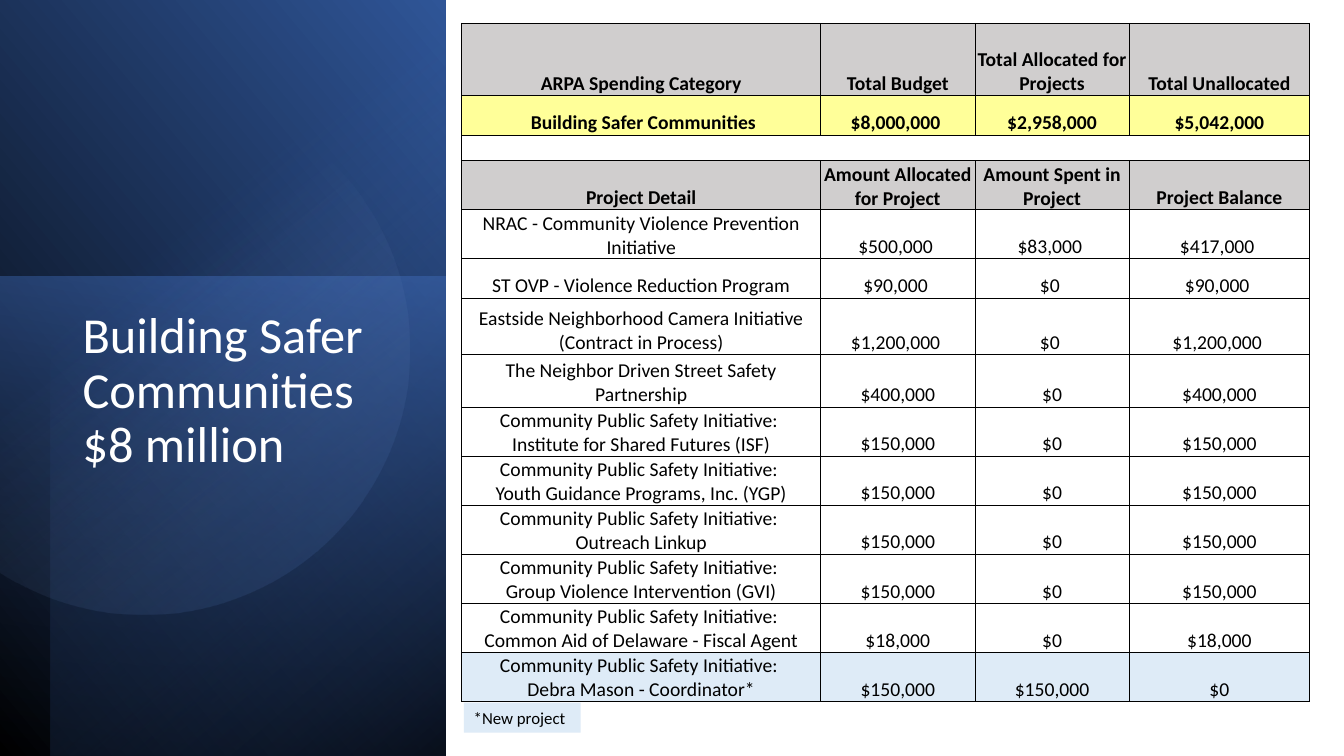
import math
from lxml import etree
from pptx import Presentation
from pptx import util as u
from pptx.dml.color import RGBColor
from pptx.enum import shapes, text
from pptx.oxml.ns import qn

Inches, Pt = u.Inches, u.Pt
INK = {"black": "000000", "white": "FFFFFF", "blue": "2F5597", "mid": "4472C4",
       "navy": "203864", "pale": "8FAADC", "grey": "D0CECE",
       "yellow": "FFFF99", "ice": "DEEBF7"}


def shade(shape, angle, stops):
    """Fill with a linear gradient of (position, colour, opacity) stops."""
    shape.shadow.inherit = False
    shape.line.fill.background()
    shape.fill.gradient()
    grad = shape._element.spPr.find(qn("a:gradFill"))
    grad.find(qn("a:lin")).set("ang", str(angle * 60000))
    ramp = grad.find(qn("a:gsLst"))
    for old in list(ramp):
        ramp.remove(old)
    for pos, ink, alpha in stops:
        stop = etree.SubElement(ramp, qn("a:gs"), pos=str(pos * 1000))
        tone = etree.SubElement(stop, qn("a:srgbClr"), val=INK[ink])
        etree.SubElement(tone, qn("a:alpha"), val=str(alpha * 1000))


def write(para, words, size, ink="black", bold=False):
    run = para.add_run()
    run.text = words
    run.font.name = "Calibri"
    run.font.size = Pt(size)
    run.font.bold = bold
    run.font.color.rgb = RGBColor.from_string(INK[ink])


deck = Presentation()
deck.slide_width, deck.slide_height = Inches(13.33), Inches(7.5)
slide = deck.slides.add_slide(deck.slide_layouts[6])

# Blue side panel: left, top, width, height, turn, mirrored, angle, stops
panels = [
    (-1.55, 1.55, 7.52, 4.42, 90, True, 310,
     [(0, "black", 100), (100, "blue", 100)]),
    (-0.17, 2.91, 4.76, 4.42, 270, False, 190,
     [(0, "mid", 50), (100, "navy", 0)]),
    (-1.29, 1.79, 7.5, 3.92, 270, True, 220,
     [(0, "black", 59), (69, "mid", 0)]),
]
for left, top, wide, high, turn, flip, angle, stops in panels:
    panel = slide.shapes.add_shape(
        shapes.MSO_SHAPE.RECTANGLE,
        Inches(left), Inches(top), Inches(wide), Inches(high))
    panel.rotation = turn
    if flip:
        panel._element.spPr.find(qn("a:xfrm")).set("flipH", "1")
    shade(panel, angle, stops)

# Circle cut off by the left edge of the slide
mid_x, mid_y, radius = 1.43, 3.47, 2.63
edge = math.acos(-mid_x / radius)
steps = 120
arc = []
for i in range(steps + 1):
    turn = edge * (2 * i / steps - 1)
    arc.append((Inches(mid_x + radius * math.cos(turn)),
                Inches(mid_y + radius * math.sin(turn))))
build = slide.shapes.build_freeform(*arc[0])
build.add_line_segments(arc[1:], close=True)
shade(build.convert_to_shape(), 52, [(39, "pale", 0), (100, "blue", 26)])

# Title
title = slide.shapes.add_textbox(
    Inches(0.72), Inches(3.03), Inches(3.15), Inches(3.36))
title.text_frame.word_wrap = True
para = title.text_frame.paragraphs[0]
para.line_spacing = 0.9
write(para, "Building Safer Communities $8 million", 36, "white")

# Budget table: height, fill, bold, cells
group = "Community Public Safety Initiative: \n"
rows = [
    (0.72, "grey", True, ["ARPA Spending Category", "Total Budget",
                          "Total Allocated for Projects", "Total Unallocated"]),
    (0.39, "yellow", True, [" Building Safer Communities", "$8,000,000 ",
                            "$2,958,000", "$5,042,000"]),
    (0.16, None, False, [""] * 4),
    (0.45, "grey", True, ["Project Detail", "Amount Allocated for Project",
                          "Amount Spent in Project", "Project Balance"]),
    (0.39, None, False, ["NRAC - Community Violence Prevention Initiative",
                         "$500,000 ", "$83,000 ", "$417,000 "]),
    (0.39, None, False, ["ST OVP - Violence Reduction Program",
                         "$90,000 ", "$0 ", "$90,000 "]),
    (0.56, None, False,
     ["Eastside Neighborhood Camera Initiative (Contract in Process)",
      "$1,200,000 ", "$0 ", "$1,200,000 "]),
    (0.52, None, False, ["The Neighbor Driven Street Safety Partnership",
                         "$400,000", "$0", "$400,000"]),
    (0.4, None, False, [group + "Institute for Shared Futures (ISF)",
                        "$150,000", "$0", "$150,000"]),
    (0.41, None, False, [group + "Youth Guidance Programs, Inc. (YGP)",
                         "$150,000", "$0", "$150,000"]),
    (0.38, None, False, [group + "Outreach Linkup",
                         "$150,000", "$0", "$150,000"]),
    (0.38, None, False, [group + "Group Violence Intervention (GVI)",
                         "$150,000", "$0", "$150,000"]),
    (0.38, None, False, [group + "Common Aid of Delaware - Fiscal Agent",
                         "$18,000", "$0", "$18,000"]),
    (0.38, "ice", False, [group + "Debra Mason - Coordinator*",
                          "$150,000", "$150,000", "$0"]),
]
widths = [3.56, 1.53, 1.53, 1.79]
table = slide.shapes.add_table(
    len(rows), len(widths), Inches(4.58), Inches(0.23),
    Inches(sum(widths)), Inches(sum(row[0] for row in rows))).table
table.first_row = table.horz_banding = False
for col, wide in zip(table.columns, widths):
    col.width = Inches(wide)

for r, (high, ink, bold, cells) in enumerate(rows):
    table.rows[r].height = Inches(high)
    for c, words in enumerate(cells):
        cell = table.cell(r, c)
        cell.margin_left = cell.margin_right = Inches(0.01)
        cell.margin_top = Inches(0.02)
        cell.margin_bottom = 0
        cell.vertical_anchor = text.MSO_ANCHOR.BOTTOM
        frame = cell.text_frame
        for i, line in enumerate(words.split("\n")):
            para = frame.add_paragraph() if i else frame.paragraphs[0]
            para.alignment = text.PP_ALIGN.CENTER
            if line:
                write(para, line, 14, bold=bold)
            else:
                etree.SubElement(para._p, qn("a:endParaRPr"), sz="1400")
        # Borders come before the fill in the cell properties
        props = cell._tc.get_or_add_tcPr()
        for side in ("lnL", "lnR", "lnT", "lnB"):
            rule = etree.SubElement(props, qn("a:" + side), w=str(Pt(0.5)))
            solid = etree.SubElement(rule, qn("a:solidFill"))
            etree.SubElement(solid, qn("a:srgbClr"), val=INK["black"])
        if ink:
            cell.fill.solid()
            cell.fill.fore_color.rgb = RGBColor.from_string(INK[ink])
        else:
            cell.fill.background()
table.cell(2, 0).merge(table.cell(2, 3))

# Footnote key
note = slide.shapes.add_textbox(
    Inches(4.6), Inches(6.97), Inches(1.16), Inches(0.3))
note.fill.solid()
note.fill.fore_color.rgb = RGBColor.from_string(INK["ice"])
note.text_frame.word_wrap = True
write(note.text_frame.paragraphs[0], "*New project", 12)

deck.save("out.pptx")
